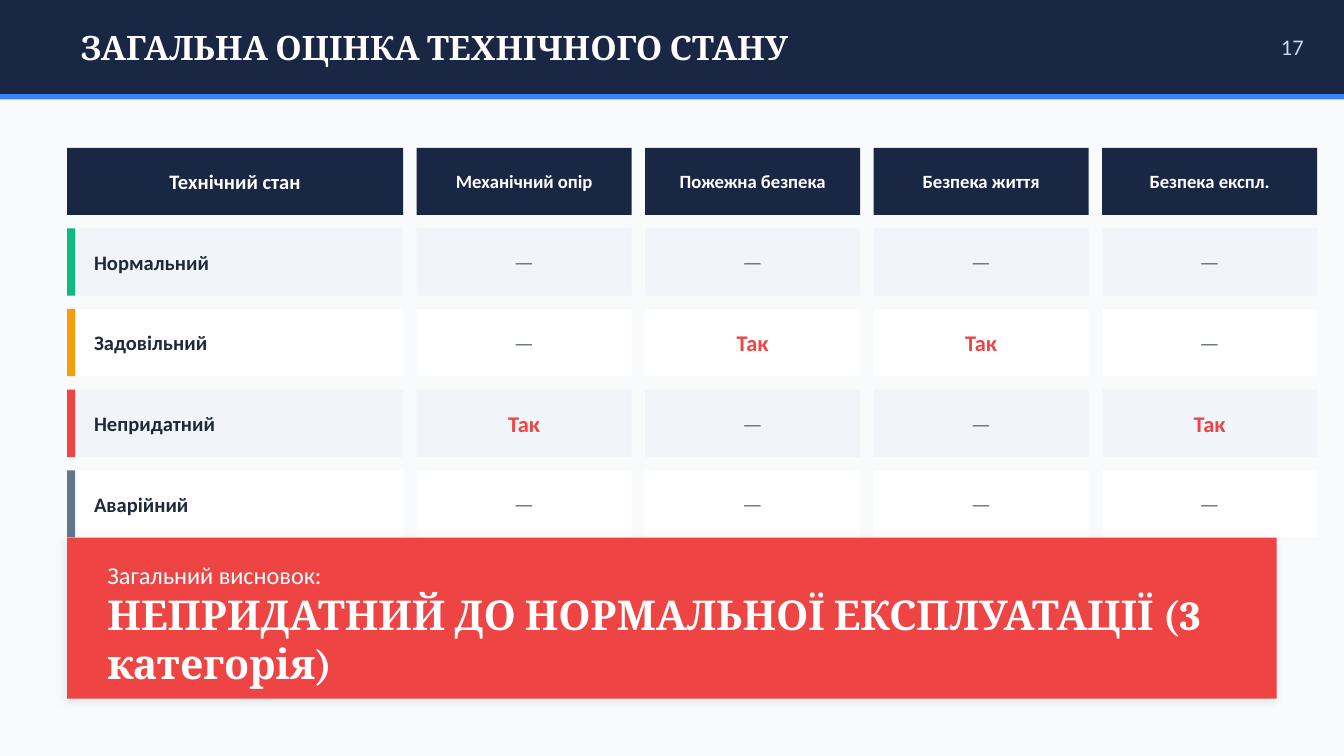
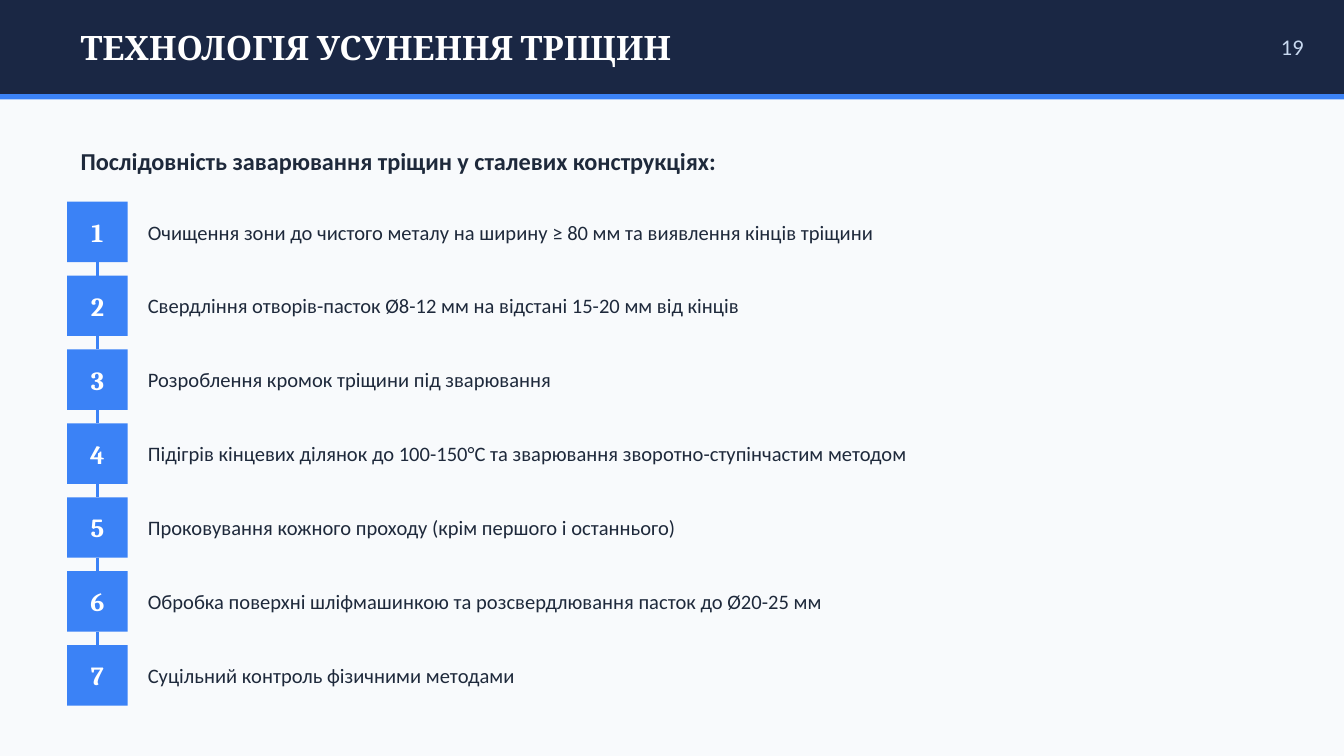
from dataclasses import dataclass

from lxml import etree
from pptx import Presentation
from pptx.dml.color import RGBColor
from pptx.enum.shapes import MSO_CONNECTOR, MSO_SHAPE
from pptx.enum.text import MSO_ANCHOR, MSO_AUTO_SIZE, PP_ALIGN
from pptx.oxml.ns import qn
from pptx.util import Inches, Pt

LEFT, CENTER, RIGHT = PP_ALIGN.LEFT, PP_ALIGN.CENTER, PP_ALIGN.RIGHT
MIDDLE = MSO_ANCHOR.MIDDLE
NO_AUTOFIT = MSO_AUTO_SIZE.NONE
RECTANGLE = MSO_SHAPE.RECTANGLE
STRAIGHT = MSO_CONNECTOR.STRAIGHT
TOP_SITE, BOTTOM_SITE = 0, 2
TITLE_ONLY_LAYOUT = 5

# All lengths are in grid units; the slide is 100 columns by 56.25 rows.
WIDTH, HEIGHT = 10, 5.625
COLUMNS = 100
UNIT = Inches(WIDTH) / COLUMNS
MARGIN = 5


@dataclass(frozen=True)
class Theme:
    background: str = "F8FAFC"
    navy: str = "1A2744"
    blue: str = "3B82F6"
    pale_blue: str = "C8D9F0"
    ink: str = "1E293B"
    slate: str = "64748B"
    stripe: str = "F1F5F9"
    white: str = "FFFFFF"
    green: str = "10B981"
    amber: str = "F59E0B"
    red: str = "EF4444"
    black: str = "000000"
    serif: str = "Cambria"
    sans: str = "Calibri"
    conclusion_size: int = 22
    title_size: int = 18
    badge_size: int = 14
    lead_size: int = 13
    mark_size: int = 12
    body_size: int = 11
    header_size: int = 10


THEME = Theme()


def text_format(size, color, name=THEME.sans, bold=False):
    return {"size": Pt(size), "color": color, "name": name, "bold": bold}


TITLE = text_format(THEME.title_size, THEME.white, THEME.serif, True)
PAGE_NUMBER = text_format(THEME.mark_size, THEME.pale_blue)
FIRST_HEADER = text_format(THEME.body_size, THEME.white, bold=True)
HEADER = text_format(THEME.header_size, THEME.white, bold=True)
ROW_LABEL = text_format(THEME.body_size, THEME.ink, bold=True)
MARKS = {
    "—": text_format(THEME.mark_size, THEME.slate),
    "Так": text_format(THEME.mark_size, THEME.red, bold=True),
}
CONCLUSION_LEAD = text_format(THEME.lead_size, THEME.white)
CONCLUSION = text_format(THEME.conclusion_size, THEME.white, THEME.serif, True)
LEAD = text_format(THEME.lead_size, THEME.ink, bold=True)
BADGE = text_format(THEME.badge_size, THEME.white, THEME.serif, True)
STEP = text_format(THEME.body_size, THEME.ink)

CRITERIA = ["Механічний опір", "Пожежна безпека", "Безпека життя", "Безпека експл."]
CONDITIONS = [
    ("Нормальний", THEME.green, ["—", "—", "—", "—"]),
    ("Задовільний", THEME.amber, ["—", "Так", "Так", "—"]),
    ("Непридатний", THEME.red, ["Так", "—", "—", "Так"]),
    ("Аварійний", THEME.slate, ["—", "—", "—", "—"]),
]
STEPS = [
    "Очищення зони до чистого металу на ширину ≥ 80 мм та виявлення кінців тріщини",
    "Свердління отворів-пасток Ø8-12 мм на відстані 15-20 мм від кінців",
    "Розроблення кромок тріщини під зварювання",
    "Підігрів кінцевих ділянок до 100-150°C та зварювання зворотно-ступінчастим методом",
    "Проковування кожного проходу (крім першого і останнього)",
    "Обробка поверхні шліфмашинкою та розсвердлювання пасток до Ø20-25 мм",
    "Суцільний контроль фізичними методами",
]


def grid(*lengths):
    return [round(length * UNIT) for length in lengths]


class Deck:
    def __init__(self):
        self.presentation = Presentation()
        self.presentation.slide_width = Inches(WIDTH)
        self.presentation.slide_height = Inches(HEIGHT)
        fill = self.presentation.slide_master.background.fill
        fill.solid()
        fill.fore_color.rgb = RGBColor.from_string(THEME.background)
        self.slide = None

    def new_slide(self, title, number):
        """Start a slide with its header band, title and page number."""
        layout = self.presentation.slide_layouts[TITLE_ONLY_LAYOUT]
        self.slide = self.presentation.slides.add_slide(layout)
        self.box((0, 0, COLUMNS, 7), THEME.navy)
        self.box((0, 7, COLUMNS, 0.4), THEME.blue)
        placeholder = self.slide.shapes.title
        placeholder.left, placeholder.top, placeholder.width, placeholder.height = grid(6, 1, 85, 5)
        self.set_text(placeholder, title, TITLE)
        # The title comes first in the tree, so lift it above the band.
        placeholder.element.getparent().append(placeholder.element)
        self.text((92, 1, 5, 5), number, PAGE_NUMBER, RIGHT)

    def set_text(self, shape, text, style, alignment=LEFT, indent=0):
        frame = shape.text_frame
        settings = {
            "word_wrap": True, "auto_size": NO_AUTOFIT, "vertical_anchor": MIDDLE,
            "margin_left": grid(indent)[0], "margin_top": 0,
            "margin_right": 0, "margin_bottom": 0,
        }
        for name, value in settings.items():
            setattr(frame, name, value)
        paragraph = frame.paragraphs[0]
        paragraph.alignment = alignment
        run = paragraph.add_run()
        run.text = text
        for name, value in style.items():
            if name == "color":
                run.font.color.rgb = RGBColor.from_string(value)
            else:
                setattr(run.font, name, value)

    def text(self, area, text, style, alignment=LEFT):
        self.set_text(self.slide.shapes.add_textbox(*grid(*area)), text, style, alignment)

    def box(self, area, color, text=None, style=None, alignment=CENTER, indent=0):
        shape = self.slide.shapes.add_shape(RECTANGLE, *grid(*area))
        shape.shadow.inherit = False
        shape.fill.solid()
        shape.fill.fore_color.rgb = RGBColor.from_string(color)
        shape.line.fill.background()
        if text is not None:
            self.set_text(shape, text, style, alignment, indent)
        return shape

    def soft_shadow(self, shape):
        effects = shape.element.spPr.find(qn("a:effectLst"))
        shadow = etree.SubElement(
            effects, qn("a:outerShdw"), blurRad=str(Pt(4)), dist=str(Pt(2)),
            dir=str(135 * 60000), algn="bl", rotWithShape="0")
        color = etree.SubElement(shadow, qn("a:srgbClr"), val=THEME.black)
        etree.SubElement(color, qn("a:alpha"), val="8000")

    def join(self, upper, lower):
        connector = self.slide.shapes.add_connector(STRAIGHT, 0, 0, 0, 0)
        connector.begin_connect(upper, BOTTOM_SITE)
        connector.end_connect(lower, TOP_SITE)
        connector.line.color.rgb = RGBColor.from_string(THEME.blue)
        connector.line.width = Pt(2)
        etree.SubElement(connector.element.spPr, qn("a:effectLst"))


def build_assessment(deck):
    deck.new_slide("ЗАГАЛЬНА ОЦІНКА ТЕХНІЧНОГО СТАНУ", "17")
    first_row, row_height, gap = 11, 5, 1
    label_width, mark_width = 25, 16
    mark_lefts = [MARGIN + label_width + gap + index * (mark_width + gap)
                  for index in range(len(CRITERIA))]

    deck.box((MARGIN, first_row, label_width, row_height), THEME.navy,
             "Технічний стан", FIRST_HEADER)
    for left, criterion in zip(mark_lefts, CRITERIA):
        deck.box((left, first_row, mark_width, row_height), THEME.navy, criterion, HEADER)

    for index, (condition, accent, marks) in enumerate(CONDITIONS):
        top = first_row + (index + 1) * (row_height + gap)
        fill = THEME.white if index % 2 else THEME.stripe
        deck.box((MARGIN, top, label_width, row_height), fill,
                 condition, ROW_LABEL, LEFT, indent=2)
        deck.box((MARGIN, top, 0.6, row_height), accent)
        for left, mark in zip(mark_lefts, marks):
            deck.box((left, top, mark_width, row_height), fill, mark, MARKS[mark])

    panel = deck.box((MARGIN, 40, COLUMNS - 2 * MARGIN, 12), THEME.red)
    deck.soft_shadow(panel)
    deck.text((8, 41, 84, 3.5), "Загальний висновок:", CONCLUSION_LEAD)
    deck.text((8, 45, 84, 5), "НЕПРИДАТНИЙ ДО НОРМАЛЬНОЇ ЕКСПЛУАТАЦІЇ (3 категорія)",
              CONCLUSION)


def build_repair_steps(deck):
    deck.new_slide("ТЕХНОЛОГІЯ УСУНЕННЯ ТРІЩИН", "19")
    deck.text((6, 10, 88, 4), "Послідовність заварювання тріщин у сталевих конструкціях:", LEAD)
    first_top, side, gap = 15, 4.5, 1
    previous = None
    for index, step in enumerate(STEPS):
        top = first_top + index * (side + gap)
        badge = deck.box((MARGIN, top, side, side), THEME.blue, str(index + 1), BADGE)
        if previous is not None:
            deck.join(previous, badge)
        deck.text((11, top, 83, side), step, STEP)
        previous = badge


def main():
    deck = Deck()
    build_assessment(deck)
    build_repair_steps(deck)
    deck.presentation.save("out.pptx")


if __name__ == "__main__":
    main()
